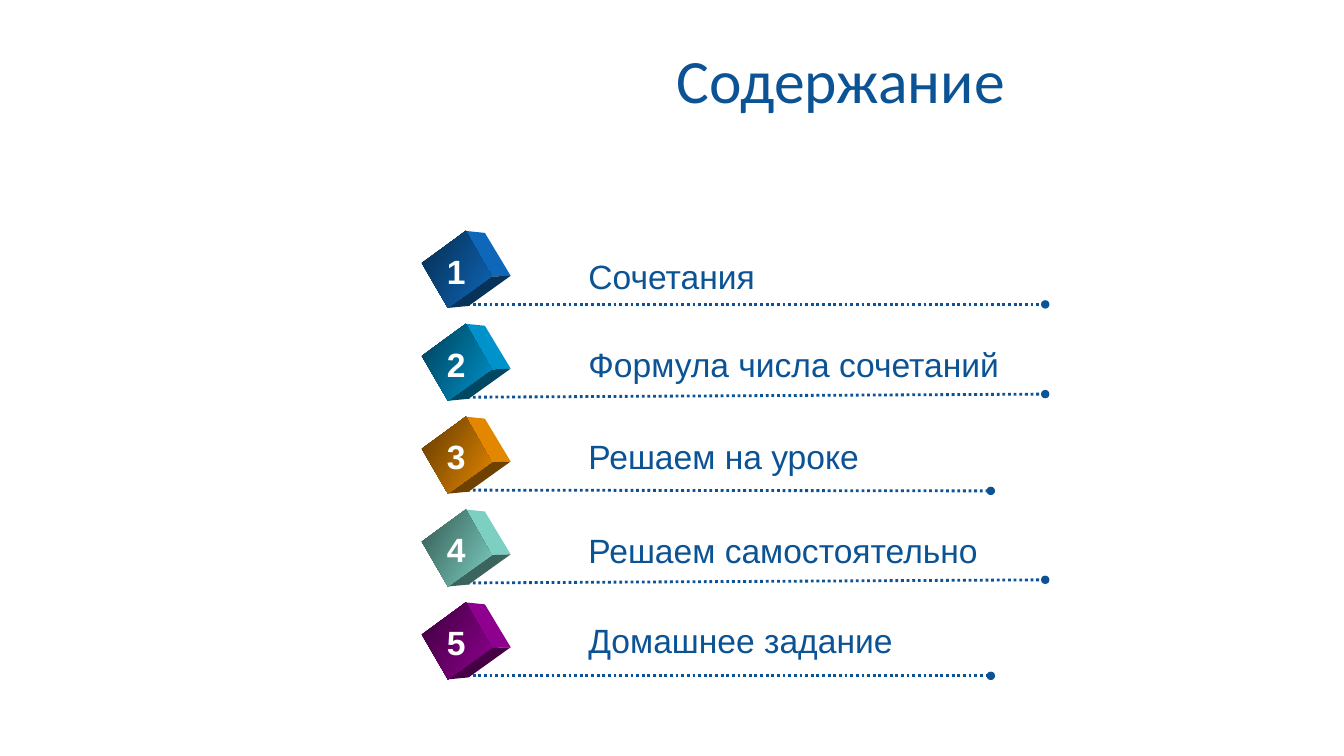
import dataclasses

import lxml.etree
import pptx
import pptx.dml.color
import pptx.enum.dml
import pptx.enum.shapes
import pptx.enum.text
import pptx.oxml.ns
import pptx.util

Cm = pptx.util.Cm
Pt = pptx.util.Pt
RGB = pptx.dml.color.RGBColor
ALIGN = pptx.enum.text.PP_ALIGN


@dataclasses.dataclass(frozen=True)
class Theme:
    ink: RGB = RGB.from_string("0B5394")
    white: RGB = RGB.from_string("FFFFFF")
    cubes: tuple = ("0F6FC6", "009DD9", "F49100", "85DFD0", "990099")
    title_size: float = 44
    text_size: float = 24
    title_font: str = "Calibri"
    text_font: str = "Arial"
    dots_width: float = 2


THEME = Theme()
ROW_LEFT, FIRST_ROW_TOP, ROW_PITCH = 10.63, 6.07, 2.34
LONG_LINE, SHORT_LINE = 26.34, 24.97
TOPICS = [
    ("Сочетания", 4.75, 0.25, LONG_LINE, 0),
    ("Формула числа сочетаний", 10.97, 0.12, LONG_LINE, -0.08),
    ("Решаем на уроке", 7.39, 0.12, SHORT_LINE, 0.02),
    ("Решаем самостоятельно", 10.41, 0.14, LONG_LINE, -0.08),
    ("Домашнее задание", 8.26, 0.06, SHORT_LINE, 0),
]

FRONT_LEFT, FRONT_TOP = (0, 0.56), (1.11, -0.25)
FRONT_RIGHT, FRONT_BOTTOM = (1.76, 0.9), (0.66, 1.69)
BACK_TOP, BACK_RIGHT, BACK_BOTTOM = (1.59, -0.2), (2.24, 0.88), (1.18, 1.64)


def shade(colour, factor):
    return RGB(*(round(channel * factor) for channel in colour))


def style(paragraph, font, size, colour, align, bold=False):
    paragraph.alignment = align
    for run in paragraph.runs:
        run.font.name = font
        run.font.size = Pt(size)
        run.font.color.rgb = colour
        run.font.bold = bold


def add_title(slide, left, top, width, height):
    title = slide.shapes.title
    title.left, title.top = Cm(left), Cm(top)
    title.width, title.height = Cm(width), Cm(height)
    title.text_frame.text = "Содержание"
    title.text_frame.vertical_anchor = pptx.enum.text.MSO_ANCHOR.MIDDLE
    style(title.text_frame.paragraphs[0], THEME.title_font, THEME.title_size,
          THEME.ink, ALIGN.CENTER)


def add_caption(slide, text, left, top, width, colour, align, bold=False):
    caption = slide.shapes.add_textbox(Cm(left), Cm(top), Cm(width), Cm(1.27))
    frame = caption.text_frame
    frame.text = text
    frame.word_wrap = False
    frame.auto_size = pptx.enum.text.MSO_AUTO_SIZE.SHAPE_TO_FIT_TEXT
    style(frame.paragraphs[0], THEME.text_font, THEME.text_size, colour, align, bold)


def add_dotted_line(slide, left, top, right, bottom):
    dots = slide.shapes.add_connector(
        pptx.enum.shapes.MSO_CONNECTOR.STRAIGHT, Cm(left), Cm(top), Cm(right), Cm(bottom))
    dots.line.color.rgb = THEME.ink
    dots.line.width = Pt(THEME.dots_width)
    dots.line.dash_style = pptx.enum.dml.MSO_LINE.ROUND_DOT
    qn = pptx.oxml.ns.qn
    lxml.etree.SubElement(dots.line._get_or_add_ln(), qn("a:tailEnd"), type="oval")
    lxml.etree.SubElement(dots._element.spPr, qn("a:effectLst"))


def add_face(slide, left, top, corners):
    points = [(Cm(left + x), Cm(top + y)) for x, y in corners]
    builder = slide.shapes.build_freeform(*points[0])
    builder.add_line_segments(points[1:], close=True)
    face = builder.convert_to_shape()
    face.shadow.inherit = False
    face.line.fill.background()
    return face


def add_cube(slide, left, top, colour):
    faces = [
        ((FRONT_TOP, BACK_TOP, BACK_RIGHT, FRONT_RIGHT), 0.93),
        ((FRONT_RIGHT, BACK_RIGHT, BACK_BOTTOM, FRONT_BOTTOM), 0.45),
    ]
    for corners, factor in faces:
        side = add_face(slide, left, top, corners)
        side.fill.solid()
        side.fill.fore_color.rgb = shade(colour, factor)
    front = add_face(slide, left, top, (FRONT_LEFT, FRONT_TOP, FRONT_RIGHT, FRONT_BOTTOM))
    front.fill.gradient()
    front.fill.gradient_angle = 330
    for stop, factor in zip(front.fill.gradient_stops, (0.4, 0.93)):
        stop.color.rgb = shade(colour, factor)


def add_topic(slide, left, top, number, colour, topic):
    text, width, text_drop, line_right, line_drop = topic
    line_top = top + 1.6
    add_dotted_line(slide, left + 1, line_top, line_right, line_top + line_drop)
    add_cube(slide, left, top, colour)
    add_caption(slide, str(number), left + 0.37, top + 0.12, 0.99,
                THEME.white, ALIGN.CENTER, bold=True)
    add_caption(slide, text, left + 3.95, top + text_drop, width, THEME.ink, ALIGN.LEFT)


def main():
    deck = pptx.Presentation()
    deck.slide_width, deck.slide_height = Cm(33.87), Cm(19.05)
    slide = deck.slides.add_slide(deck.slide_layouts[5])
    add_title(slide, 9.19, 0.13, 24, 3.71)
    for index, (topic, colour) in enumerate(zip(TOPICS, THEME.cubes)):
        add_topic(slide, ROW_LEFT, FIRST_ROW_TOP + index * ROW_PITCH,
                  index + 1, RGB.from_string(colour), topic)
    deck.save("out.pptx")


if __name__ == "__main__":
    main()
